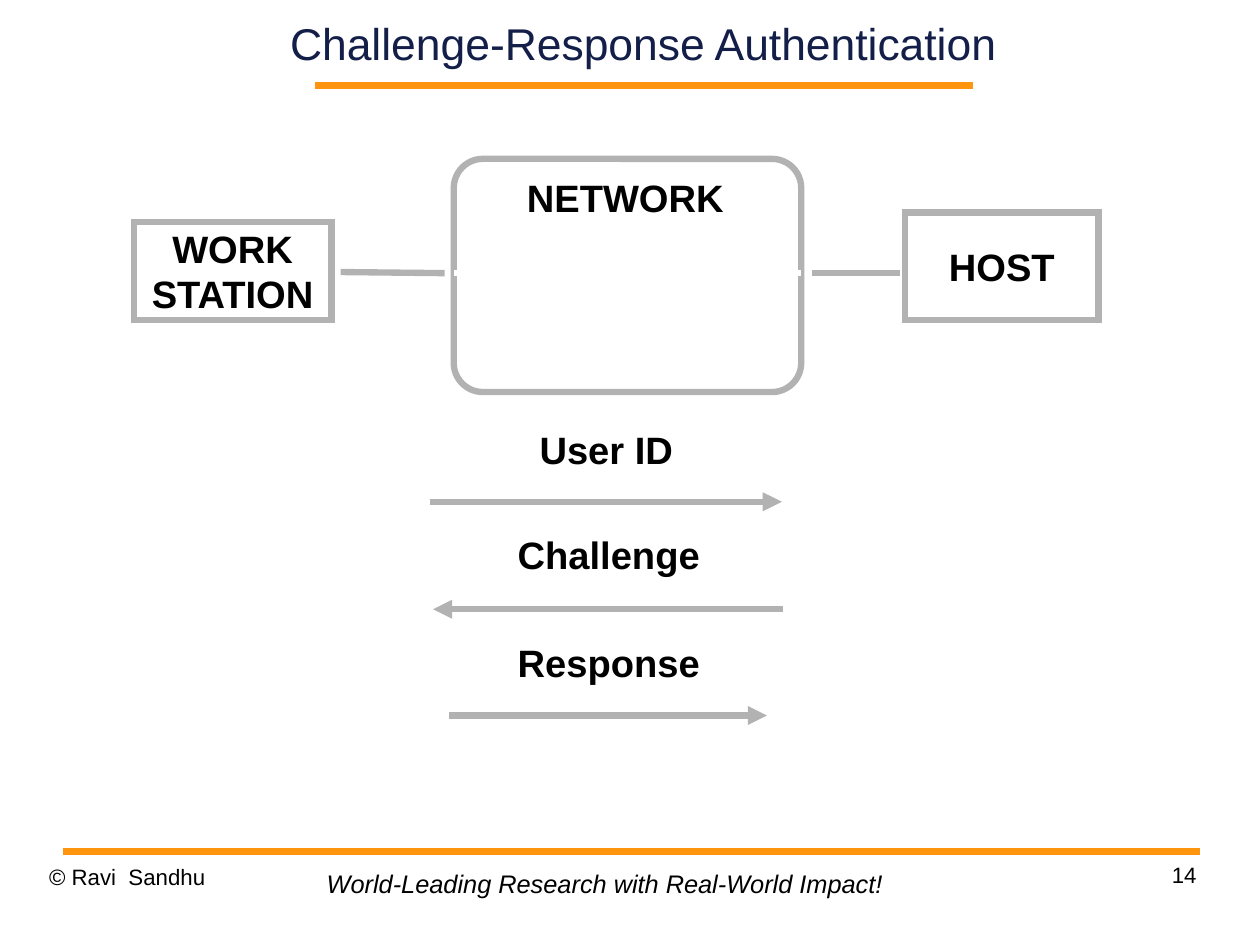
from dataclasses import dataclass

from lxml import etree
from pptx import Presentation
from pptx import util as u
from pptx.dml.color import RGBColor
from pptx.enum import shapes, text
from pptx.oxml import ns
from pptx.slide import Slide
from pptx.text.text import TextFrame

ORANGE = RGBColor(0xFF, 0x95, 0x0E)
GREY = RGBColor(0xB2, 0xB2, 0xB2)
NAVY = RGBColor(0x13, 0x1F, 0x49)
BLACK = RGBColor(0, 0, 0)
WHITE = RGBColor(0xFF, 0xFF, 0xFF)

LEFT, CENTER, RIGHT = text.PP_ALIGN.LEFT, text.PP_ALIGN.CENTER, text.PP_ALIGN.RIGHT
TOP, MIDDLE = text.MSO_ANCHOR.TOP, text.MSO_ANCHOR.MIDDLE
RECT, ROUNDED = shapes.MSO_SHAPE.RECTANGLE, shapes.MSO_SHAPE.ROUNDED_RECTANGLE


@dataclass
class Line:
    x1: float
    y1: float
    x2: float
    y2: float
    color: RGBColor = GREY
    width: float = 4
    arrow: bool = False


@dataclass
class Style:
    size: float = 24
    color: RGBColor = BLACK
    bold: bool = False
    italic: bool = False
    align: text.PP_ALIGN = LEFT
    anchor: text.MSO_ANCHOR = TOP
    spacing: float = 1.0
    inset: tuple[float, float] = (0, 0)
    wrap: bool = True
    grow: bool = False


@dataclass
class Item:
    words: str
    x: float
    y: float
    w: float
    h: float
    style: Style
    kind: shapes.MSO_SHAPE = RECT


TITLE = Style(28, NAVY, align=CENTER, anchor=MIDDLE)
COPYRIGHT = Style(14, spacing=1.01)
PAGE = Style(14, align=RIGHT, spacing=1.01)
MOTTO = Style(16, italic=True, inset=(0.1, 0.05), wrap=False, grow=True)
NODE = Style(bold=True, align=CENTER, anchor=MIDDLE, inset=(0.1, 0.05), wrap=False)
LABEL = Style(bold=True, spacing=0.87, inset=(0.07, 0.03), wrap=False, grow=True)

RULES = [
    Line(2.76, 0.75, 8.51, 0.75, ORANGE, 4.31),
    Line(0.55, 7.45, 10.5, 7.45, ORANGE, 4.31),
]
NODES = [
    Item("HOST", 7.92, 1.86, 1.69, 0.94, NODE),
    Item("WORK\nSTATION", 1.17, 1.94, 1.73, 0.86, NODE),
    Item("", 3.97, 1.39, 3.04, 2.04, NODE, ROUNDED),
]
LINKS = [
    Line(2.98, 2.38, 3.89, 2.39),
    Line(3.97, 2.39, 7.01, 2.39, WHITE),
    Line(7.1, 2.39, 7.87, 2.39),
]
MESSAGES = [
    Line(3.76, 4.39, 6.84, 4.39, arrow=True),
    Line(6.85, 5.33, 3.79, 5.33, arrow=True),
    Line(3.93, 6.26, 6.71, 6.26, arrow=True),
]
TEXTS = [
    Item("© Ravi  Sandhu", 0.43, 7.55, 2.57, 0.57, COPYRIGHT),
    Item("14", 7.9, 7.53, 2.57, 0.57, PAGE),
    Item("World-Leading Research with Real-World Impact!", 2.76, 7.55, 5.08, 0.37, MOTTO),
    Item("NETWORK", 4.54, 1.55, 1.87, 0.42, LABEL),
    Item("User ID", 4.65, 3.76, 1.32, 0.42, LABEL),
    Item("Challenge", 4.46, 4.67, 1.74, 0.42, LABEL),
    Item("Response", 4.46, 5.62, 1.74, 0.42, LABEL),
]


def write(tf: TextFrame, words: str, style: Style) -> None:
    tf.text = words
    tf.word_wrap = style.wrap
    tf.auto_size = (text.MSO_AUTO_SIZE.SHAPE_TO_FIT_TEXT if style.grow
                    else text.MSO_AUTO_SIZE.NONE)
    tf.vertical_anchor = style.anchor
    tf.margin_left = tf.margin_right = u.Inches(style.inset[0])
    tf.margin_top = tf.margin_bottom = u.Inches(style.inset[1])
    for p in tf.paragraphs:
        p.alignment = style.align
        p.line_spacing = style.spacing
        p.font.name = "Arial"
        p.font.size = u.Pt(style.size)
        p.font.bold = style.bold
        p.font.italic = style.italic
        p.font.color.rgb = style.color


def box(item: Item) -> tuple[int, ...]:
    return tuple(u.Inches(v) for v in (item.x, item.y, item.w, item.h))


def add_line(s: Slide, line: Line) -> None:
    ends = (u.Inches(v) for v in (line.x1, line.y1, line.x2, line.y2))
    c = s.shapes.add_connector(shapes.MSO_CONNECTOR.STRAIGHT, *ends)
    c.line.color.rgb = line.color
    c.line.width = u.Pt(line.width)
    if line.arrow:
        ln = c._element.spPr.find(ns.qn("a:ln"))
        etree.SubElement(ln, ns.qn("a:tailEnd"), type="triangle")
    etree.SubElement(c._element.spPr, ns.qn("a:effectLst"))


def add_node(s: Slide, item: Item) -> None:
    sp = s.shapes.add_shape(item.kind, *box(item))
    sp.shadow.inherit = False
    sp.fill.background()
    sp.line.color.rgb = GREY
    sp.line.width = u.Pt(4)
    ln = sp._element.spPr.find(ns.qn("a:ln"))
    etree.SubElement(ln, ns.qn("a:miter"), lim="800000")
    if item.kind == ROUNDED:
        sp.adjustments[0] = 0.125
    if item.words:
        write(sp.text_frame, item.words, item.style)


def add_text(s: Slide, item: Item) -> None:
    write(s.shapes.add_textbox(*box(item)).text_frame, item.words, item.style)


def main() -> None:
    prs = Presentation()
    prs.slide_width, prs.slide_height = u.Cm(28), u.Cm(21)
    s = prs.slides.add_slide(prs.slide_layouts[5])

    # Title
    heading = Item("Challenge-Response Authentication", 2.41, 0, 6.43, 0.75, TITLE)
    title = s.shapes.title
    title.left, title.top, title.width, title.height = box(heading)
    write(title.text_frame, heading.words, heading.style)

    # Nodes, then the lines that cross them
    for node in NODES:
        add_node(s, node)
    for line in RULES + LINKS + MESSAGES:
        add_line(s, line)

    # Labels and footer
    for item in TEXTS:
        add_text(s, item)

    prs.save("out.pptx")


if __name__ == "__main__":
    main()
